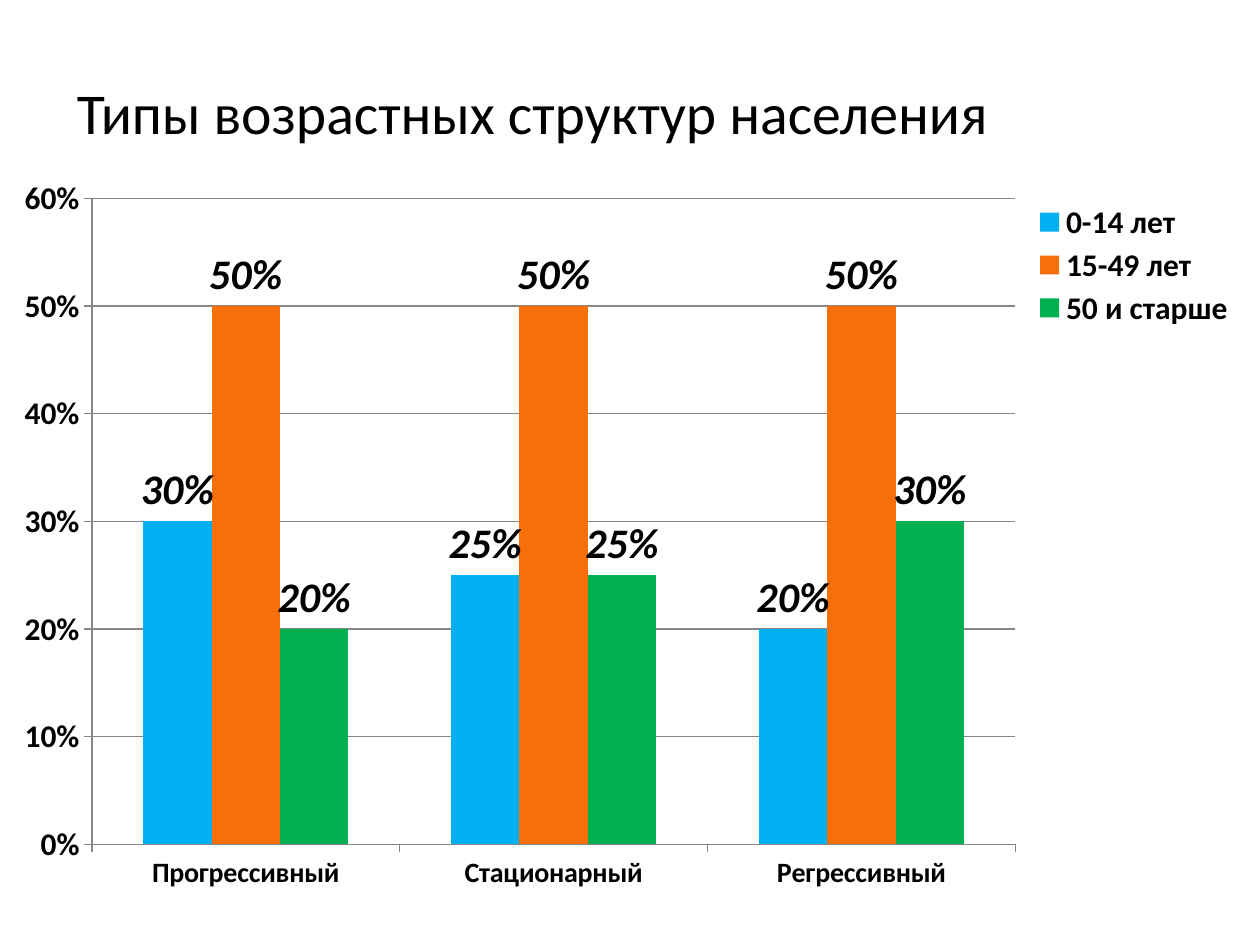
from lxml import etree
from pptx import Presentation
from pptx.chart.data import CategoryChartData
from pptx.dml.color import RGBColor
from pptx.enum.chart import XL_CHART_TYPE, XL_LABEL_POSITION, XL_LEGEND_POSITION, XL_TICK_MARK
from pptx.enum.text import MSO_ANCHOR, PP_ALIGN
from pptx.oxml.ns import qn
from pptx.util import Inches, Pt

COLUMNS = XL_CHART_TYPE.COLUMN_CLUSTERED
OUTSIDE_END = XL_LABEL_POSITION.OUTSIDE_END
LEGEND_RIGHT = XL_LEGEND_POSITION.RIGHT
TICK_OUT = XL_TICK_MARK.OUTSIDE
MIDDLE = MSO_ANCHOR.MIDDLE
LEFT = PP_ALIGN.LEFT

BLACK = RGBColor(0x00, 0x00, 0x00)
GRAY = RGBColor(0x87, 0x87, 0x87)
BLUE = RGBColor(0x00, 0xB0, 0xF0)
ORANGE = RGBColor(0xF7, 0x6F, 0x09)
GREEN = RGBColor(0x00, 0xB0, 0x50)
FONT = "Calibri"

CATEGORIES = ["Прогрессивный", "Стационарный", "Регрессивный"]
SERIES = [
    ("0-14 лет", [0.3, 0.25, 0.2], BLUE),
    ("15-49 лет", [0.5, 0.5, 0.5], ORANGE),
    ("50 и старше", [0.2, 0.25, 0.3], GREEN),
]


def set_font(font, size, bold=False, italic=False):
    values = {"name": FONT, "size": Pt(size), "bold": bold, "italic": italic}
    for name, value in values.items():
        setattr(font, name, value)
    font.color.rgb = BLACK


def set_layout(parent, index, fractions, inner=False):
    """Place a chart part by fractions of the chart area."""
    for old in parent.findall(qn("c:layout")):
        parent.remove(old)
    layout = etree.Element(qn("c:layout"))
    manual = etree.SubElement(layout, qn("c:manualLayout"))
    settings = [("layoutTarget", "inner")] if inner else []
    settings += [("xMode", "edge"), ("yMode", "edge")]
    settings += zip("xywh", fractions)
    for tag, value in settings:
        etree.SubElement(manual, qn(f"c:{tag}")).set("val", str(value))
    parent.insert(index, layout)


prs = Presentation()
prs.slide_width, prs.slide_height = Inches(10), Inches(7.5)
s = prs.slides.add_slide(prs.slide_layouts[5])

# Title
title = s.shapes.title
title.left, title.top = Inches(0.51), Inches(0.52)
title.width, title.height = Inches(9), Inches(0.79)
tf = title.text_frame
tf.vertical_anchor = MIDDLE
p = tf.paragraphs[0]
p.alignment = LEFT
p.line_spacing = 0.9
r = p.add_run()
r.text = "Типы возрастных структур населения"
set_font(r.font, 33)

# Chart data
data = CategoryChartData(number_format="0%")
data.categories = CATEGORIES
for name, values, color in SERIES:
    data.add_series(name, values)
chart = s.shapes.add_chart(
    COLUMNS, Inches(0), Inches(1.31), Inches(10), Inches(5.88), data
).chart
chart.has_title = False
set_font(chart.font, 18)

# Columns and their labels
plot = chart.plots[0]
plot.gap_width = 150
plot.overlap = 0
plot.vary_by_categories = False
for series, (name, values, color) in zip(plot.series, SERIES):
    series.format.fill.solid()
    series.format.fill.fore_color.rgb = color
    series.invert_if_negative = False
    labels = series.data_labels
    labels.show_value = True
    labels.number_format = "0%"
    labels.number_format_is_linked = False
    labels.position = OUTSIDE_END
    set_font(labels.font, 24, bold=True, italic=True)

# Axes
category_axis, value_axis = chart.category_axis, chart.value_axis
for axis, size in ((category_axis, 16), (value_axis, 18)):
    axis.major_tick_mark = TICK_OUT
    axis.format.line.color.rgb = GRAY
    axis.format.line.width = Pt(0.75)
    set_font(axis.tick_labels.font, size, bold=True)
value_axis.minimum_scale, value_axis.maximum_scale = 0, 0.6
value_axis.major_unit = 0.1
value_axis.tick_labels.number_format = "0%"
value_axis.tick_labels.number_format_is_linked = False
value_axis.has_major_gridlines = True
grid = value_axis.major_gridlines.format.line
grid.color.rgb = GRAY
grid.width = Pt(0.75)

# Legend
chart.has_legend = True
legend = chart.legend
legend.position = LEGEND_RIGHT
legend.include_in_layout = False
set_font(legend.font, 18, bold=True)

# Plot area and legend placement
plot_area = chart.element.find(f".//{qn('c:plotArea')}")
set_layout(plot_area, 0, (0.073, 0.045, 0.733, 0.872), inner=True)
set_layout(chart.element.find(f".//{qn('c:legend')}"), 1, (0.81, 0.045, 0.18, 0.18))

prs.save("out.pptx")
